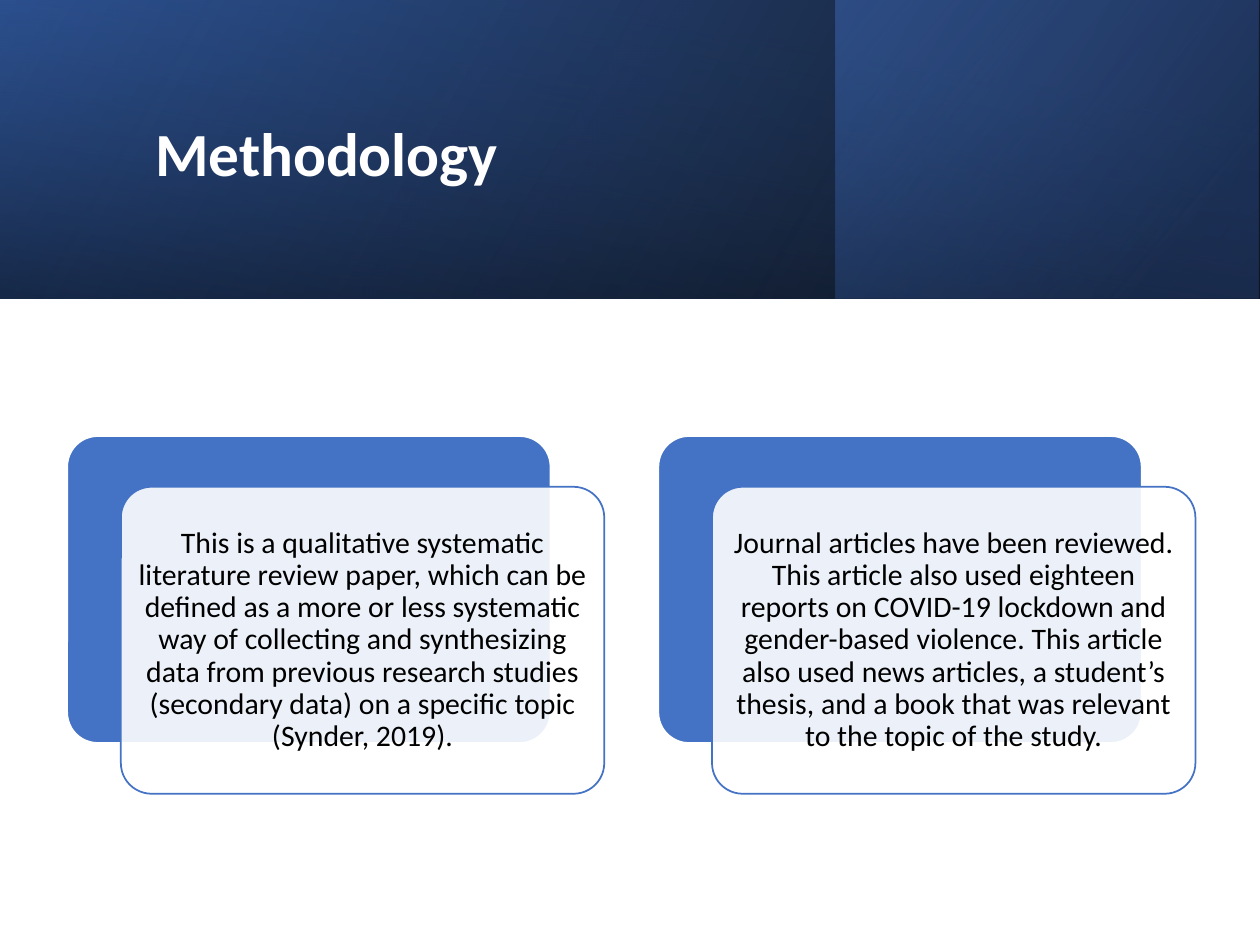
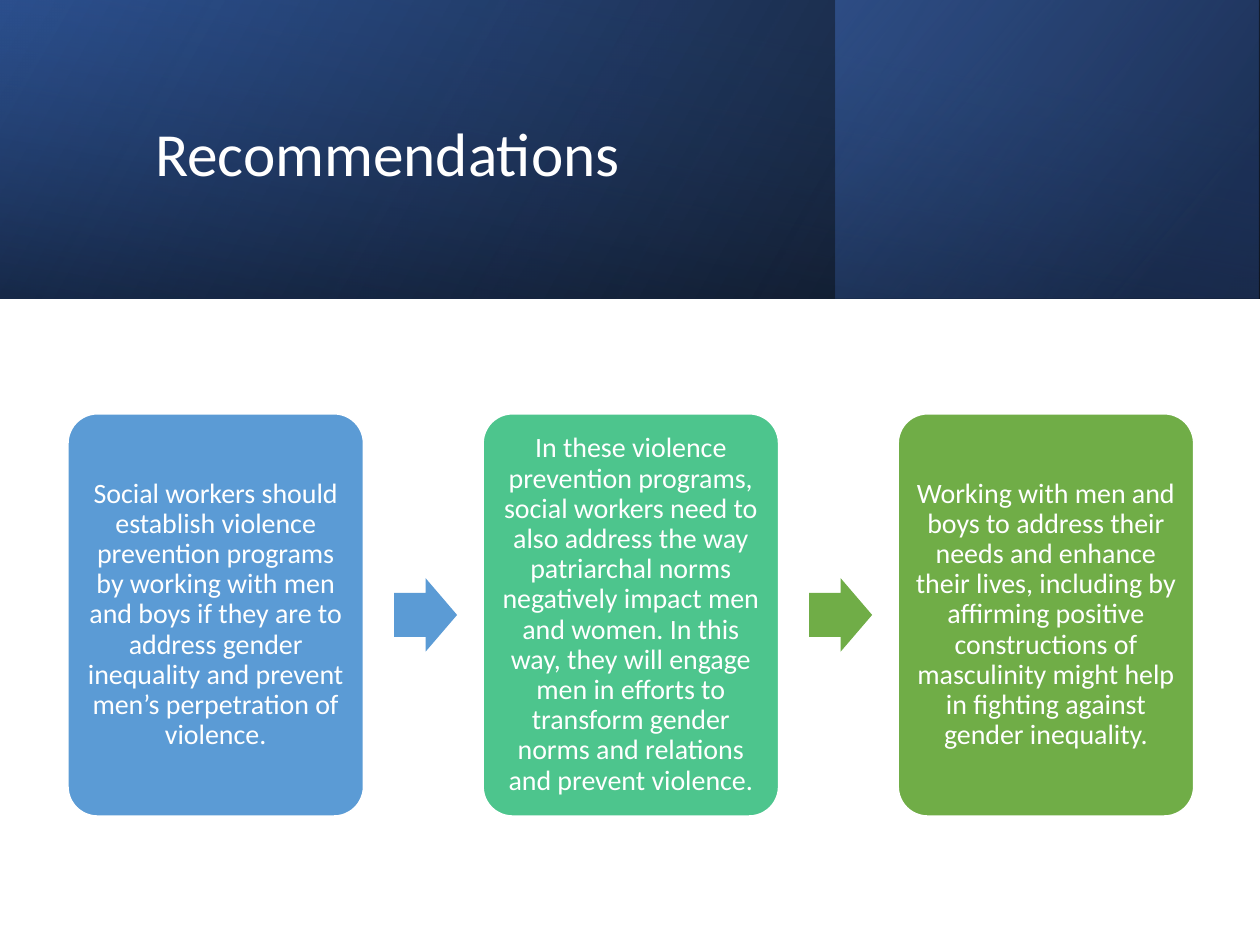
import pptx
import pptx.dml.color
import pptx.enum.shapes
import pptx.enum.text
import pptx.util
from lxml import etree
from pptx.oxml.ns import qn

Pt = pptx.util.Pt
RGBColor = pptx.dml.color.RGBColor
SHAPE = pptx.enum.shapes.MSO_SHAPE
ALIGN = pptx.enum.text.PP_ALIGN
ANCHOR = pptx.enum.text.MSO_ANCHOR

WHITE = RGBColor(0xFF, 0xFF, 0xFF)
BLACK = RGBColor(0x00, 0x00, 0x00)
BLUE = RGBColor(0x44, 0x72, 0xC4)
DEEP_BLUE = RGBColor(0x2F, 0x55, 0x97)
NAVY = RGBColor(0x20, 0x38, 0x64)
SKY = RGBColor(0x5B, 0x9B, 0xD5)
MINT = RGBColor(0x4D, 0xC5, 0x8D)
GREEN = RGBColor(0x70, 0xAD, 0x47)

FONT = "Calibri"
BAND_HEIGHT = 170.6

METHODS = [
    "This is a qualitative systematic literature review paper, which can be "
    "defined as a more or less systematic way of collecting and synthesizing "
    "data from previous research studies (secondary data) on a specific topic "
    "(Synder, 2019).",
    "Journal articles have been reviewed. This article also used eighteen "
    "reports on COVID-19 lockdown and gender-based violence. This article also "
    "used news articles, a student’s thesis, and a book that was relevant to "
    "the topic of the study.",
]

# Text, box colour, colour of the arrow that leads on to the next box
RECOMMENDATIONS = [
    ("Social workers should establish violence prevention programs by working "
     "with men and boys if they are to address gender inequality and prevent "
     "men’s perpetration of violence.", SKY, SKY),
    ("In these violence prevention programs, social workers need to also "
     "address the way patriarchal norms negatively impact men and women. In "
     "this way, they will engage men in efforts to transform gender norms and "
     "relations and prevent violence.", MINT, GREEN),
    ("Working with men and boys to address their needs and enhance their "
     "lives, including by affirming positive constructions of masculinity "
     "might help in fighting against gender inequality.", GREEN, None),
]


def set_opacity(color_parent, percent):
    color = next(color_parent.iter(qn("a:srgbClr")))
    etree.SubElement(color, qn("a:alpha")).set("val", str(percent * 1000))


class Deck:
    def __init__(self):
        self.prs = pptx.Presentation()
        self.prs.slide_width = Pt(720)
        self.prs.slide_height = Pt(540)
        self.slide = None

    def start_slide(self, title, bold=False):
        self.slide = self.prs.slides.add_slide(self.prs.slide_layouts[5])
        self.gradient_band(0, 0, 720, BAND_HEIGHT, 30,
                           [(0, BLACK, 96), (1, DEEP_BLUE, 100)])
        self.gradient_band(477.4, 0, 242, BAND_HEIGHT, 40,
                           [(0.19, NAVY, 68), (1, BLUE, 48)])
        shade = self.gradient_band(274.3, -274.7, BAND_HEIGHT, 720, 10,
                                   [(0.23, DEEP_BLUE, 16), (0.99, BLACK, 45)])
        shade.rotation = 270
        self.title(title, bold)

    def title(self, text, bold):
        heading = self.slide.shapes.title
        heading.left, heading.top = Pt(81.4), Pt(27.4)
        heading.width, heading.height = Pt(573.8), Pt(123.8)
        self.slide.shapes.element.append(heading.element)  # above the bands
        heading.text_frame.auto_size = pptx.enum.text.MSO_AUTO_SIZE.NONE
        self.set_text(heading, text, 35, WHITE, ALIGN.LEFT, bold)

    def set_text(self, shape, text, size, color, align=ALIGN.CENTER,
                 bold=False):
        frame = shape.text_frame
        frame.text = text
        frame.word_wrap = True
        frame.vertical_anchor = ANCHOR.MIDDLE
        paragraph = frame.paragraphs[0]
        paragraph.alignment = align
        paragraph.line_spacing = 0.9
        font = paragraph.runs[0].font
        font.name, font.size, font.bold = FONT, Pt(size), bold
        font.color.rgb = color

    def shape(self, kind, left, top, width, height):
        shape = self.slide.shapes.add_shape(
            kind, Pt(left), Pt(top), Pt(width), Pt(height))
        shape.shadow.inherit = False
        shape.line.fill.background()
        return shape

    def gradient_band(self, left, top, width, height, angle, stops):
        """Add a mirrored rectangle; stops are (position, colour, opacity %)."""
        band = self.shape(SHAPE.RECTANGLE, left, top, width, height)
        band.element.spPr.find(qn("a:xfrm")).set("flipH", "1")
        band.fill.gradient()
        band.fill.gradient_angle = angle
        for stop, (position, color, _) in zip(band.fill.gradient_stops, stops):
            stop.position = position
            stop.color.rgb = color
        for node, (_, _, opacity) in zip(band.element.iter(qn("a:gs")), stops):
            set_opacity(node, opacity)
        return band

    def card(self, left, top, width, height, fill, outline=WHITE):
        card = self.shape(SHAPE.ROUNDED_RECTANGLE, left, top, width, height)
        card.adjustments[0] = 0.1
        card.fill.solid()
        card.fill.fore_color.rgb = fill
        card.line.color.rgb = outline
        card.line.width = Pt(1)
        frame = card.text_frame
        frame.margin_left = frame.margin_right = Pt(5)
        frame.margin_top = frame.margin_bottom = Pt(5)
        return card

    def arrow(self, left, middle, color):
        width, height = 36, 42
        arrow = self.shape(SHAPE.RIGHT_ARROW, left, middle - height / 2,
                           width, height)
        arrow.adjustments[0], arrow.adjustments[1] = 0.6, 0.5
        arrow.fill.solid()
        arrow.fill.fore_color.rgb = color


def methodology(deck):
    deck.start_slide("Methodology", bold=True)
    top, width, height = 249.2, 276.2, 175.4
    for index, method in enumerate(METHODS):
        left = 38.4 + index * 337.8
        deck.card(left, top, width, height, BLUE)
        front = deck.card(left + 30.7, top + 29, width, height, WHITE, BLUE)
        set_opacity(front.element.spPr.find(qn("a:solidFill")), 90)
        deck.set_text(front, method, 17, BLACK)


def recommendations(deck):
    deck.start_slide("Recommendations")
    top, width, height = 236.4, 169, 230
    for index, (text, color, arrow_color) in enumerate(RECOMMENDATIONS):
        left = 38.8 + index * 237.2
        box = deck.card(left, top, width, height, color)
        deck.set_text(box, text, 16, WHITE)
        if arrow_color is not None:
            deck.arrow(left + 186.4, top + height / 2, arrow_color)


def main():
    deck = Deck()
    methodology(deck)
    recommendations(deck)
    deck.prs.save("out.pptx")


if __name__ == "__main__":
    main()
